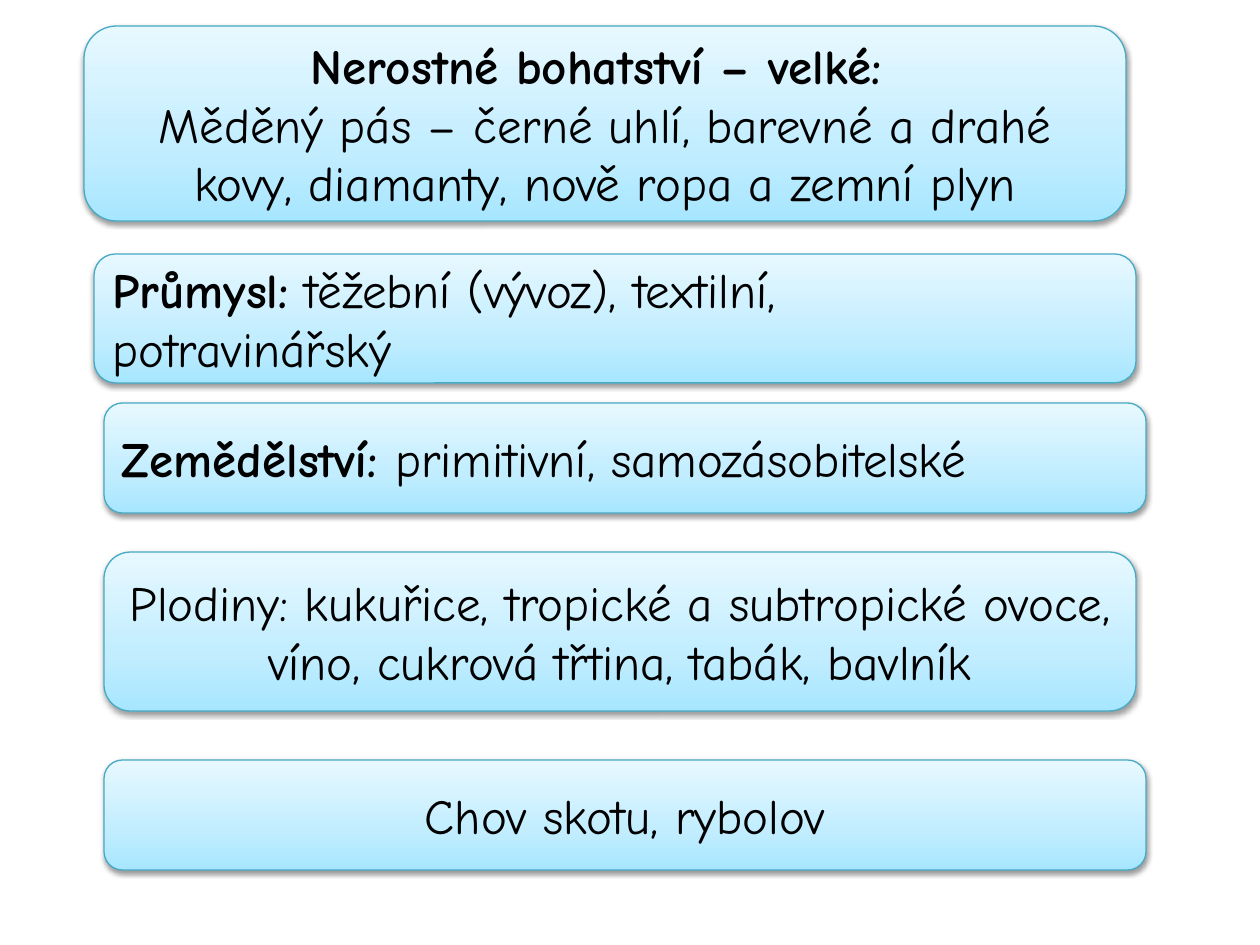
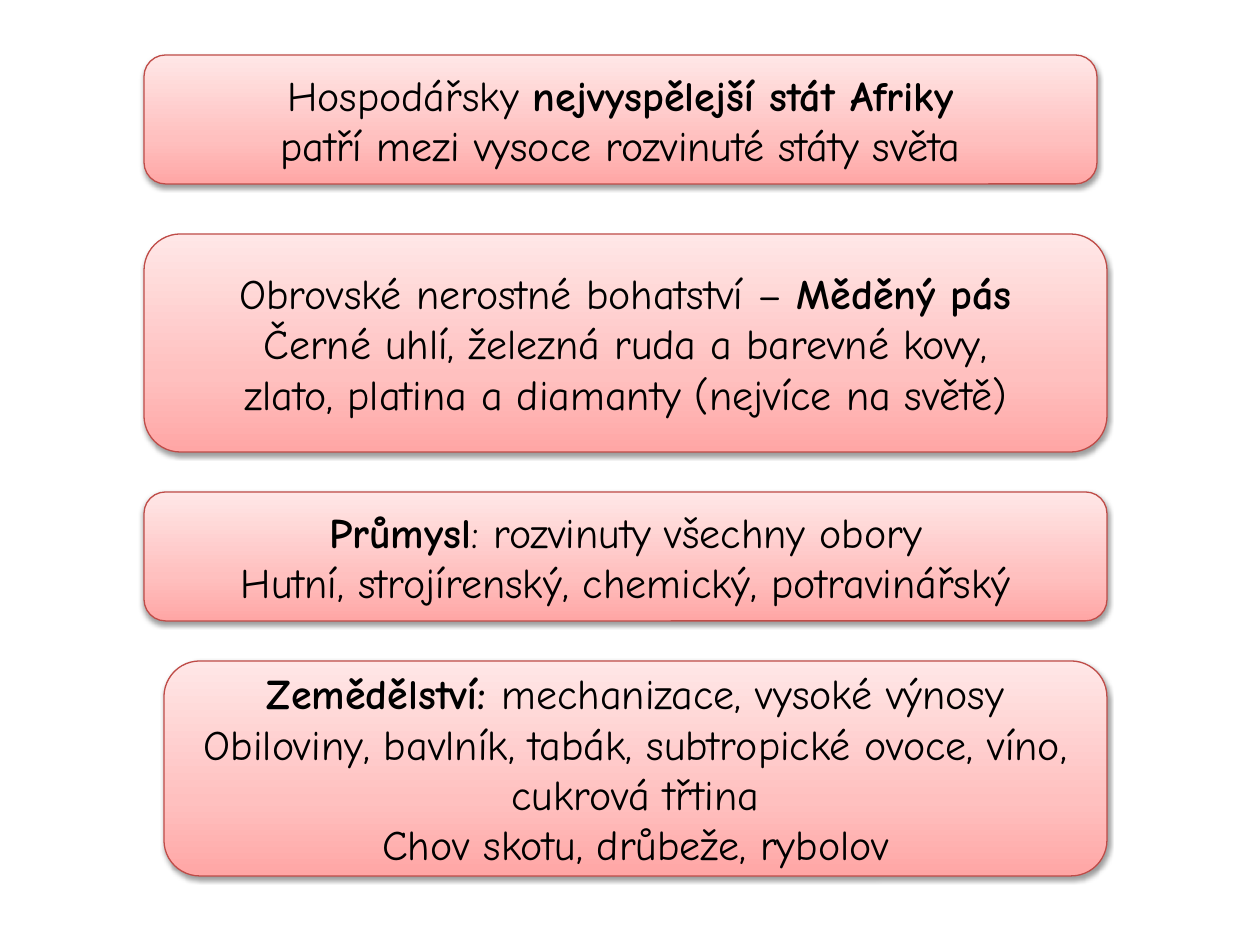
from dataclasses import dataclass

from lxml.etree import SubElement as Sub
from pptx import Presentation
from pptx.dml.color import RGBColor as Rgb
from pptx.enum.shapes import MSO_SHAPE as Shape
from pptx.enum.text import MSO_ANCHOR as Anchor, PP_ALIGN as Align
from pptx.oxml.ns import qn
from pptx.util import Pt

SCALE = 914400 / 126  # EMU in one px


# Look shared by both slides
@dataclass(frozen=True)
class Theme:
    font: str = "Comic Neue"
    ink: str = "000000"
    edge: float = 0.75
    blur: float = 3.1
    drop: float = 1.6
    stops: tuple = (0, 35, 100)


@dataclass(frozen=True)
class Tone:
    fills: tuple
    line: str
    size: int


LOOK = Theme()
BLUE = Tone(("A7E6FF", "C1EDFF", "E7F8FF"), "46AAC5", 28)
RED = Tone(("FFA6A5", "FFC0BF", "FFE7E7"), "BF4C48", 24)

# Panels: left, top, width, height, alignment, paragraphs (*bold*, | breaks a line)
LAND = [
    (84, 26, 1042, 195, Align.CENTER, [
        "*Nerostné bohatství – velké: *",
        "Měděný pás – černé uhlí, barevné a drahé kovy, diamanty, "
        "nově ropa a zemní plyn"]),
    (94, 254, 1042, 129, Align.LEFT, [
        "*Průmysl:* těžební (vývoz), textilní,|potravinářský"]),
    (104, 403, 1042, 110, Align.LEFT, [
        "*Zemědělství: *primitivní, samozásobitelské"]),
    (104, 552, 1032, 159, Align.CENTER, [
        "Plodiny: kukuřice, tropické a subtropické ovoce, víno, "
        "cukrová třtina, tabák, bavlník"]),
    (104, 760, 1042, 110, Align.CENTER, ["Chov skotu, rybolov"]),
]
STATE = [
    (144, 55, 953, 129, Align.CENTER, [
        "Hospodářsky *nejvyspělejší stát Afriky*",
        "patří mezi vysoce rozvinuté státy světa"]),
    (144, 234, 963, 218, Align.CENTER, [
        "Obrovské nerostné bohatství – *Měděný pás*",
        "Černé uhlí, železná ruda a barevné kovy,",
        "zlato, platina a diamanty (nejvíce na světě)"]),
    (144, 492, 963, 129, Align.CENTER, [
        "*Průmysl*: rozvinuty všechny obory",
        "Hutní, strojírenský, chemický, potravinářský"]),
    (164, 661, 943, 215, Align.CENTER, [
        "*Zemědělství: *mechanizace, vysoké výnosy",
        "Obiloviny, bavlník, tabák, subtropické ovoce, víno, cukrová třtina",
        "Chov skotu, drůbeže, rybolov"]),
]


def px(num):
    return round(num * SCALE)


def put(item, values):
    for name, value in values.items():
        setattr(item, name, value)


# Three-stop gradient, rising from the bottom edge
def shade(box, tone):
    box.fill.gradient()
    box.fill.gradient_angle = 90
    stops = box.fill._xPr.find(f".//{qn('a:gsLst')}")
    stops.clear()
    for pos, tint in zip(LOOK.stops, tone.fills):
        stop = Sub(stops, qn("a:gs"), pos=str(pos * 1000))
        Sub(stop, qn("a:srgbClr"), val=tint)


# Soft shadow below the panel
def cast(box):
    box.shadow.inherit = False
    parts = box._element.spPr.find(qn("a:effectLst"))
    soft = Sub(parts, qn("a:outerShdw"), blurRad=str(Pt(LOOK.blur)),
               dist=str(Pt(LOOK.drop)), dir="5400000", rotWithShape="0")
    tint = Sub(soft, qn("a:srgbClr"), val="000000")
    Sub(tint, qn("a:alpha"), val="38000")


def write(para, text, size):
    for turn, part in enumerate(text.split("*")):
        for row, line in enumerate(part.split("|")):
            if row:
                para.add_line_break()
            if line:
                run = para.add_run()
                run.text = line
                put(run.font, {"name": LOOK.font, "size": Pt(size),
                               "bold": turn % 2 == 1})
                run.font.color.rgb = Rgb.from_string(LOOK.ink)


def panel(slide, tone, left, top, wide, high, align, texts):
    box = slide.shapes.add_shape(Shape.ROUNDED_RECTANGLE,
                                 *map(px, (left, top, wide, high)))
    shade(box, tone)
    box.line.width = Pt(LOOK.edge)
    box.line.color.rgb = Rgb.from_string(tone.line)
    cast(box)
    frame = box.text_frame
    put(frame, {"word_wrap": True, "vertical_anchor": Anchor.MIDDLE})
    for num, text in enumerate(texts):
        para = frame.add_paragraph() if num else frame.paragraphs[0]
        para.alignment = align
        write(para, text, tone.size)


def main():
    deck = Presentation()
    put(deck, {"slide_width": px(1260), "slide_height": px(945)})
    for tone, panels in ((BLUE, LAND), (RED, STATE)):
        slide = deck.slides.add_slide(deck.slide_layouts[6])
        for args in panels:
            panel(slide, tone, *args)
    deck.save("out.pptx")


if __name__ == "__main__":
    main()
